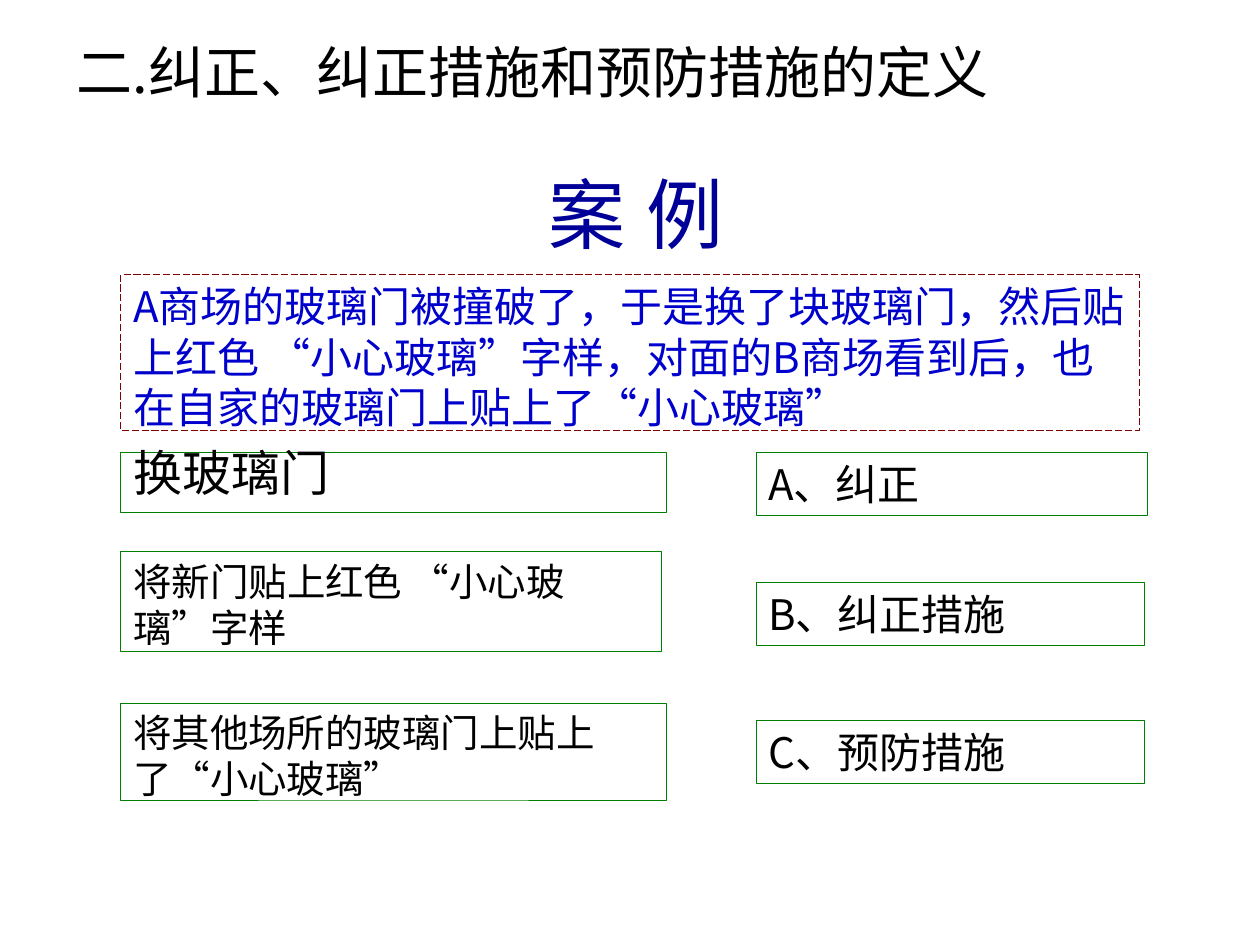
from dataclasses import dataclass
from typing import Optional

from lxml import etree
from pptx import Presentation, util as u
from pptx.dml.color import RGBColor
from pptx.enum import dml, shapes, text
from pptx.oxml import ns


@dataclass(frozen=True)
class Theme:
    body_font: str = "Noto Sans CJK SC"
    heading_font: str = "Arial"
    black: str = "000000"
    white: str = "FFFFFF"
    navy: str = "000099"
    blue: str = "0000CC"
    green: str = "008000"
    maroon: str = "800000"
    title: int = 32
    heading: int = 44
    measure: int = 28
    term: int = 24
    note: int = 22
    line: float = 0.5


THEME = Theme()
SLIDE_WIDTH, SLIDE_HEIGHT = u.Inches(10), u.Inches(7.5)
COLUMN, ROW = SLIDE_WIDTH / 100, SLIDE_HEIGHT / 75
LEFT, RIGHT = 9.6, 60  # grid columns where the two stacks of boxes start


@dataclass(frozen=True)
class Box:
    """A text block; column, row, width and height are in grid units."""
    words: str
    column: float
    row: float
    width: float
    height: float
    size: int
    color: str = THEME.black
    font: str = THEME.body_font
    border: Optional[str] = None
    fill: Optional[str] = None
    dash: Optional[dml.MSO_LINE] = None
    anchor: text.MSO_ANCHOR = text.MSO_ANCHOR.TOP
    align: text.PP_ALIGN = text.PP_ALIGN.LEFT
    spacing: float = 1.0


def write_text(shape, box: Box) -> None:
    """Put the words of a box into its shape."""
    frame = shape.text_frame
    paragraph = frame.paragraphs[0]
    run = paragraph.add_run()
    run.text = box.words
    formats = {
        frame: {"word_wrap": True, "vertical_anchor": box.anchor},
        paragraph: {"alignment": box.align, "line_spacing": box.spacing},
        run.font: {"name": box.font, "size": u.Pt(box.size)},
    }
    for target, values in formats.items():
        for name, value in values.items():
            setattr(target, name, value)
    run.font.color.rgb = RGBColor.from_string(box.color)
    # East Asian characters need their own typeface entry
    properties = run._r.get_or_add_rPr()
    etree.SubElement(properties, ns.qn("a:ea"), typeface=box.font)


def draw_box(slide, box: Box) -> None:
    """Draw a bordered rectangle, or a plain text box without a border."""
    place = [round(length) for length in (box.column * COLUMN, box.row * ROW,
                                          box.width * COLUMN, box.height * ROW)]
    if box.border is None:
        shape = slide.shapes.add_textbox(*place)
    else:
        shape = slide.shapes.add_shape(shapes.MSO_SHAPE.RECTANGLE, *place)
        shape.shadow.inherit = False
        shape.line.color.rgb = RGBColor.from_string(box.border)
        shape.line.width = u.Pt(THEME.line)
        if box.dash is not None:
            shape.line.dash_style = box.dash
        if box.fill is None:
            shape.fill.background()
        else:
            shape.fill.solid()
            shape.fill.fore_color.rgb = RGBColor.from_string(box.fill)
    write_text(shape, box)


# Title and heading
HEADINGS = [
    Box("二.纠正、纠正措施和预防措施的定义", 5.1, 1.3, 90, 9.3, THEME.title,
        anchor=text.MSO_ANCHOR.MIDDLE, spacing=0.9),
    Box("案 例", 23.2, 12, 54.6, 9.8, THEME.heading, THEME.navy, THEME.heading_font,
        anchor=text.MSO_ANCHOR.MIDDLE, align=text.PP_ALIGN.CENTER),
]

# What the shops did
MEASURES = [
    Box("换玻璃门", LEFT, 35.9, 43.3, 4.8, THEME.measure,
        border=THEME.green, spacing=0.7),
    Box("将新门贴上红色 “小心玻璃”字样", LEFT, 43.8, 42.9, 7.9, THEME.note,
        border=THEME.green),
    Box("将其他场所的玻璃门上贴上了“小心玻璃”", LEFT, 55.8, 43.3, 7.7, THEME.note,
        border=THEME.green),
]

# Terms to match with the measures
TERMS = [
    Box(words, RIGHT, row, width, 5, THEME.term, border=THEME.green)
    for words, row, width in [("A、纠正", 35.9, 31.1),
                              ("B、纠正措施", 46.2, 30.8),
                              ("C、预防措施", 57.2, 30.8)]
]

# The case itself
CASE = Box("A商场的玻璃门被撞破了，于是换了块玻璃门，然后贴上红色 “小心玻璃”字样，"
           "对面的B商场看到后，也在自家的玻璃门上贴上了“小心玻璃”",
           LEFT, 21.8, 80.8, 12.4, THEME.term, THEME.blue, border=THEME.maroon,
           fill=THEME.white, dash=dml.MSO_LINE.LONG_DASH)


def main() -> None:
    presentation = Presentation()
    presentation.slide_width, presentation.slide_height = SLIDE_WIDTH, SLIDE_HEIGHT
    slide = presentation.slides.add_slide(presentation.slide_layouts[6])
    for box in [*HEADINGS, *MEASURES, *TERMS, CASE]:
        draw_box(slide, box)
    presentation.save("out.pptx")


if __name__ == "__main__":
    main()
